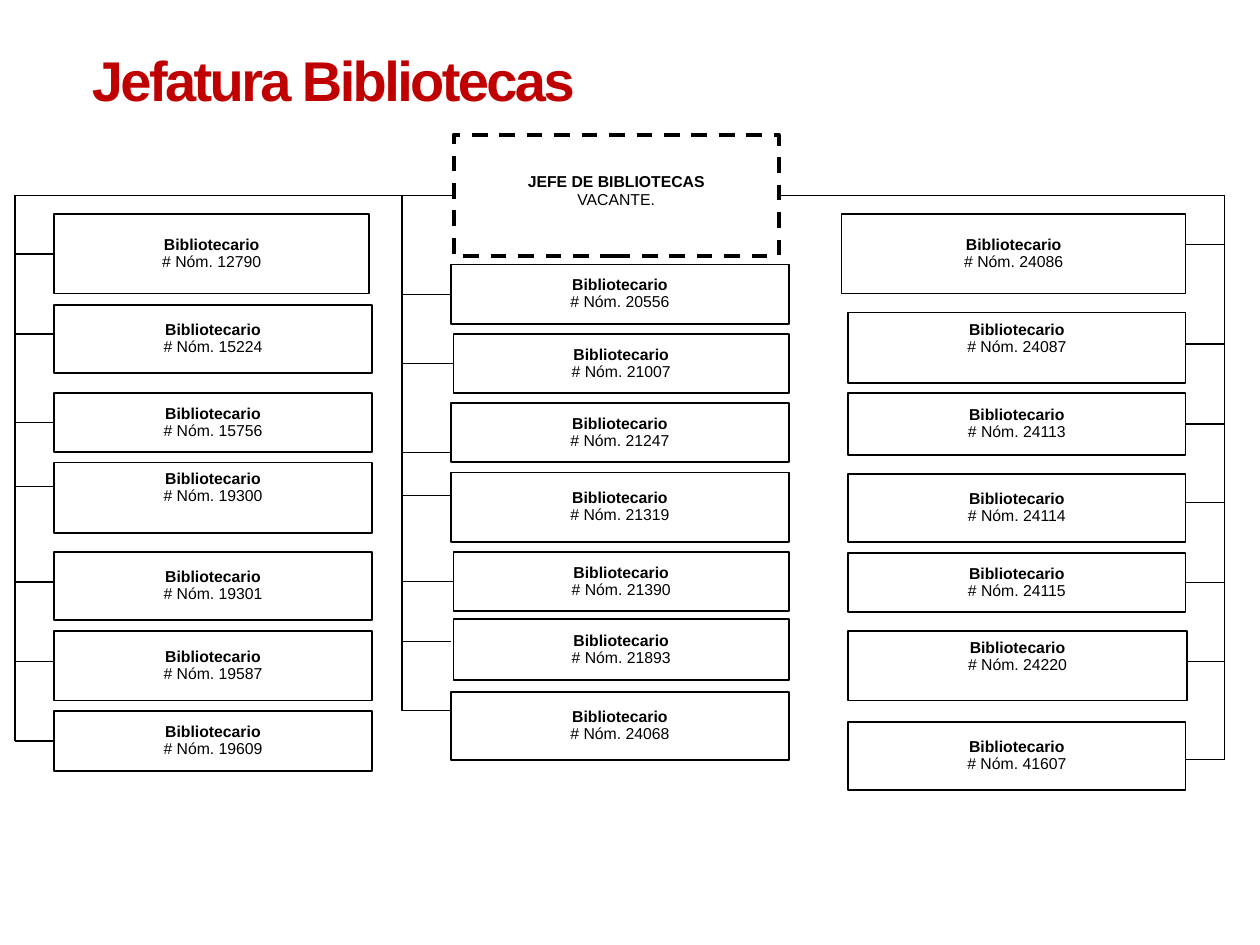
from typing import NamedTuple

from lxml import etree
from pptx import Presentation
from pptx.dml.color import RGBColor
from pptx.enum.dml import MSO_LINE
from pptx.enum.shapes import MSO_CONNECTOR, MSO_SHAPE
from pptx.enum.text import MSO_ANCHOR, MSO_AUTO_SIZE, PP_ALIGN
from pptx.oxml.ns import qn
from pptx.util import Inches, Pt

STRAIGHT, RECTANGLE, DASH = MSO_CONNECTOR.STRAIGHT, MSO_SHAPE.RECTANGLE, MSO_LINE.DASH
TOP, MIDDLE = MSO_ANCHOR.TOP, MSO_ANCHOR.MIDDLE
LEFT, CENTER, NO_FIT = PP_ALIGN.LEFT, PP_ALIGN.CENTER, MSO_AUTO_SIZE.NONE
LEFT_SITE, RIGHT_SITE = 1, 3

COLORS = {"title": "C00000", "ink": "000000", "paper": "FFFFFF"}
FONT = "Arial"
COLUMNS, ROWS = 100, 75  # page grid with square cells
CELL = Inches(10) / COLUMNS
TITLE_ONLY = 5

TITLE_BOX = (6.3, 3.1, 58.5, 22.6)
CHIEF_BOX = (36, 10.7, 25.8, 9.6)
BUS_ROW = 15.5


class Post(NamedTuple):
    """One librarian; top counts from the column's top, branch from the box's middle."""
    number: str
    top: float
    height: float
    branch: float = 0
    left_shift: float = 0
    right_shift: float = 0
    lift: float = 0


# trunk column, box of the whole branch, posts
BRANCHES = [
    (1.2, (4.3, 17, 25.2, 44.2), [
        Post("12790", 0, 6.3, right_shift=-0.2),
        Post("15224", 7.2, 5.4, -0.4),
        Post("15756", 14.2, 4.7),
        Post("19300", 19.7, 5.6, -0.9, lift=0.8),
        Post("19301", 26.8, 5.4, -0.3),
        Post("19587", 33.1, 5.5, -0.35),
        Post("19609", 39.4, 4.8),
    ]),
    (31.9, (35.8, 21, 26.8, 39.3), [
        Post("20556", 0, 4.7),
        Post("21007", 5.5, 4.7, left_shift=0.2),
        Post("21247", 11, 4.7, 1.55),
        Post("21319", 16.5, 5.5, -0.95),
        Post("21390", 22.8, 4.7, left_shift=0.2),
        Post("21893", 28.1, 4.9, -0.65, left_shift=0.2),
        Post("24068", 33.9, 5.4, -1.2),
    ]),
    (97.2, (67.3, 17, 26.8, 45.7), [
        Post("24086", 0, 6.3, -0.75, left_shift=-0.5),
        Post("24087", 7.8, 5.6, -0.3, lift=0.7),
        Post("24113", 14.2, 4.9),
        Post("24114", 20.6, 5.4, -0.4),
        Post("24115", 26.9, 4.7),
        Post("24220", 33.1, 5.5, -0.35, right_shift=0.1, lift=0.7),
        Post("41607", 40.3, 5.4, 0.3),
    ]),
]


def cells(*counts):
    return [round(count * CELL) for count in counts]


def color(name):
    return RGBColor.from_string(COLORS[name])


def style_span(span, size, ink, bold):
    span.font.name = FONT
    span.font.size = Pt(size)
    span.font.bold = bold
    span.font.color.rgb = color(ink)


def add_line(page, start, end):
    line = page.shapes.add_connector(STRAIGHT, *cells(*start, *end))
    line.line.color.rgb = color("ink")
    line.line.width = Pt(0.75)
    etree.SubElement(line._element.spPr, qn("a:effectLst"))
    return line


def add_card(page, box, role, detail, lift=0, spacing=0.9):
    """Outlined box with a bold role above a detail; lift raises the text."""
    card = page.shapes.add_shape(RECTANGLE, *cells(*box))
    card.shadow.inherit = False
    card.fill.solid()
    card.fill.fore_color.rgb = color("paper")
    card.line.color.rgb = color("ink")
    card.line.width = Pt(1)
    frame = card.text_frame
    frame.word_wrap = False
    frame.vertical_anchor = MIDDLE
    frame.margin_top, frame.margin_bottom = cells(0.5, 0.5 + 2 * lift)
    frame.text = f"{role}\n{detail}"
    for para, bold in zip(frame.paragraphs, (True, False)):
        para.alignment = CENTER
        para.line_spacing = spacing
        style_span(para.runs[0], 9, "ink", bold)
    return card


def add_title(page, box):
    title = page.shapes.title
    title.left, title.top, title.width, title.height = cells(*box)
    frame = title.text_frame
    frame.text = "Jefatura Bibliotecas"
    frame.word_wrap = True
    frame.auto_size = NO_FIT
    frame.vertical_anchor = TOP
    para = frame.paragraphs[0]
    para.alignment = LEFT
    span = para.runs[0]
    style_span(span, 32, "title", True)
    span._r.get_or_add_rPr().set("spc", "-150")


def add_chief(page, box):
    card = add_card(page, box, "JEFE DE BIBLIOTECAS", "VACANTE.", lift=0.4, spacing=1)
    card.line.width = Pt(2.25)
    card.line.dash_style = DASH


def add_branch(page, trunk, box, posts):
    """Column of posts, each joined to the vertical trunk beside it."""
    left, top, width, _ = box
    on_left = trunk < left
    site, edge = (LEFT_SITE, left) if on_left else (RIGHT_SITE, left + width)
    for post in posts:
        card_box = (left + post.left_shift, top + post.top,
                    width - post.left_shift + post.right_shift, post.height)
        card = add_card(page, card_box, "Bibliotecario",
                        f"# Nóm. {post.number}", post.lift)
        row = top + post.top + post.height / 2 + post.branch
        line = add_line(page, (trunk, row), (edge, row))
        if not post.branch:
            line.end_connect(card, site)
    add_line(page, (trunk, BUS_ROW), (trunk, row))


def main():
    deck = Presentation()
    deck.slide_width, deck.slide_height = cells(COLUMNS, ROWS)
    page = deck.slides.add_slide(deck.slide_layouts[TITLE_ONLY])
    add_title(page, TITLE_BOX)
    add_line(page, (BRANCHES[0][0], BUS_ROW), (BRANCHES[-1][0], BUS_ROW))
    add_chief(page, CHIEF_BOX)
    for trunk, box, posts in BRANCHES:
        add_branch(page, trunk, box, posts)
    deck.save("out.pptx")


if __name__ == "__main__":
    main()
